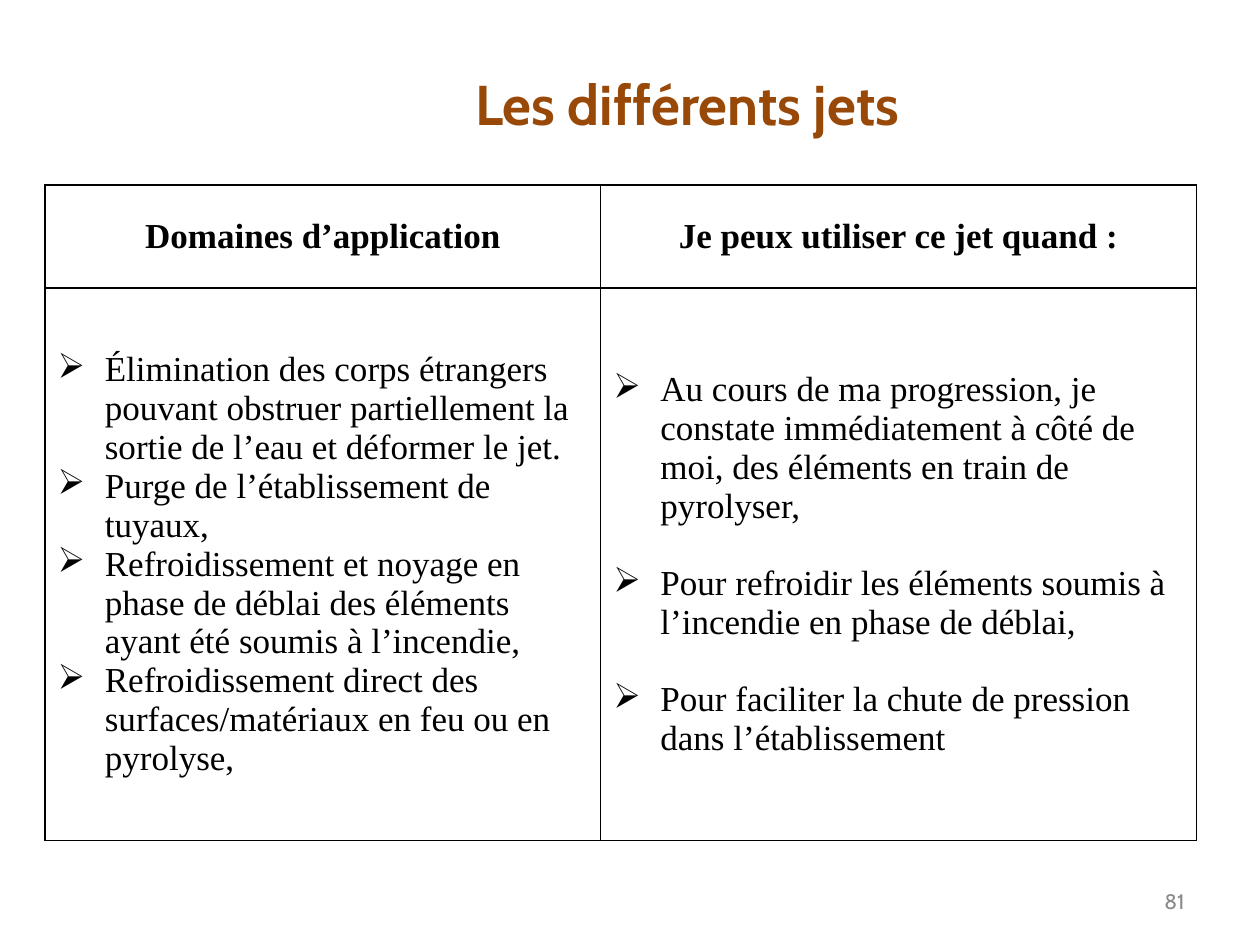
from lxml.etree import SubElement
from pptx import Presentation
from pptx.dml.color import RGBColor
from pptx.enum.text import MSO_ANCHOR, PP_ALIGN
from pptx.oxml import parse_xml
from pptx.oxml.ns import nsdecls, qn
from pptx.util import Cm, Pt

COLORS = {"title": "984807", "text": "000000", "page": "898989", "line": "000000"}
SANS, SERIF = "Cabin", "Times New Roman"
INDENT = Cm(0.95)

HEADS = ["Domaines d’application", "Je peux utiliser ce jet quand\u00a0:"]
USES = [
    "Élimination des corps étrangers pouvant obstruer partiellement la sortie de l’eau et déformer le jet.",
    "Purge de l’établissement de tuyaux,",
    "Refroidissement et noyage en phase de déblai des éléments ayant été soumis à l’incendie,",
    "Refroidissement direct des surfaces/matériaux en feu ou en pyrolyse,",
]
CASES = [
    "Au cours de ma progression, je constate immédiatement à côté de moi, des éléments en train de pyrolyser,",
    "Pour refroidir les éléments soumis à l’incendie en phase de déblai,",
    "Pour faciliter la chute de pression dans l’établissement",
]


def style(para, face, size, color, bold=False):
    for run in para.runs:
        font = run.font
        font.name, font.size, font.bold = face, Pt(size), bold
        font.color.rgb = RGBColor.from_string(COLORS[color])


def add_label(slide, box, text, align, **look):
    frame = slide.shapes.add_textbox(*map(Cm, box)).text_frame
    frame.word_wrap = True
    frame.vertical_anchor = MSO_ANCHOR.MIDDLE
    frame.text = text
    para = frame.paragraphs[0]
    para.alignment = align
    style(para, **look)


def add_bullet(para):
    props = para._p.get_or_add_pPr()
    props.set("marL", str(INDENT))
    props.set("indent", str(-INDENT))
    SubElement(props, qn("a:buChar")).set("char", "➢")


def prepare(cell):
    """Clear the fill, centre the text vertically and draw all four borders."""
    cell.fill.background()
    cell.vertical_anchor = MSO_ANCHOR.MIDDLE
    props = cell._tc.get_or_add_tcPr()
    for spot, side in enumerate("LRTB"):
        props.insert(spot, parse_xml(
            f'<a:ln{side} {nsdecls("a")} w="{Pt(1)}"><a:solidFill>'
            f'<a:srgbClr val="{COLORS["line"]}"/></a:solidFill></a:ln{side}>'))


def fill_head(cell, text):
    prepare(cell)
    cell.text_frame.text = text
    para = cell.text_frame.paragraphs[0]
    para.alignment = PP_ALIGN.CENTER
    style(para, SERIF, 20, "text", bold=True)


def fill_list(cell, items, gap):
    prepare(cell)
    frame = cell.text_frame
    frame.text = "\n".join(items)
    for num, para in enumerate(frame.paragraphs):
        add_bullet(para)
        if num and gap:
            para.space_before = Pt(gap)
        style(para, SERIF, 20, "text")


def add_grid(slide, box):
    left, top, width, height = box
    table = slide.shapes.add_table(2, 2, *map(Cm, box)).table
    first, head = 11.2, 2.08
    table.columns[0].width, table.columns[1].width = Cm(first), Cm(width - first)
    table.rows[0].height, table.rows[1].height = Cm(head), Cm(height - head)
    for col, (text, items, gap) in enumerate(zip(HEADS, (USES, CASES), (0, 22))):
        fill_head(table.cell(0, col), text)
        fill_list(table.cell(1, col), items, gap)


def main():
    deck = Presentation()
    deck.slide_width, deck.slide_height = Cm(25.4), Cm(19.05)
    slide = deck.slides.add_slide(deck.slide_layouts[6])
    add_label(slide, (3.1, 0.76, 21.51, 2.62), "Les différents jets",
              PP_ALIGN.CENTER, face=SANS, size=32, color="title", bold=True)
    add_grid(slide, (0.91, 3.73, 23.21, 13.21))
    add_label(slide, (18.21, 17.65, 5.92, 1.02), "81",
              PP_ALIGN.RIGHT, face=SANS, size=12, color="page")
    deck.save("out.pptx")


if __name__ == "__main__":
    main()
